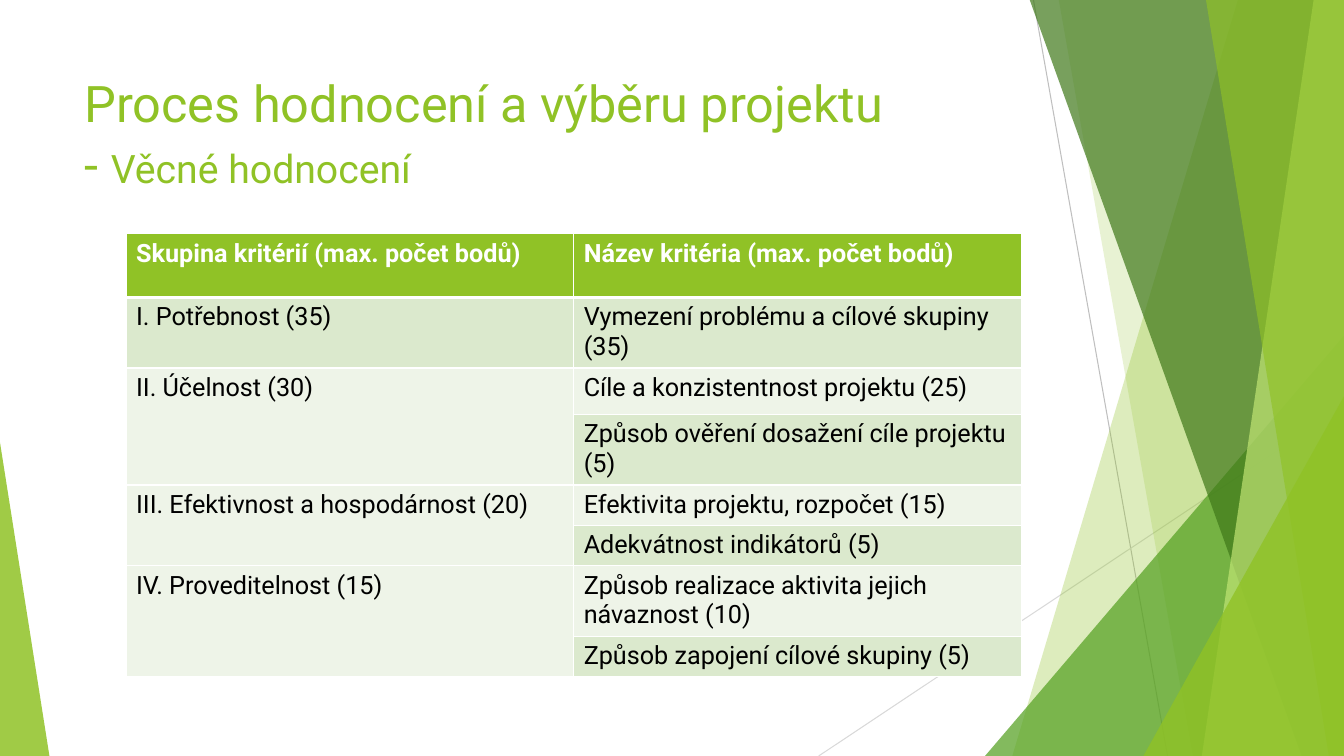
from pptx import Presentation
from pptx import util as u
from pptx.dml.color import RGBColor
from pptx.enum import shapes, text
from pptx.oxml import ns, xmlchemy
from lxml import etree

WIDTH, HEIGHT, TOP = 13.33, 7.5, -0.01
WHITE = RGBColor(0xFF, 0xFF, 0xFF)
BLACK = RGBColor(0x00, 0x00, 0x00)
LIME = RGBColor(0x90, 0xC2, 0x26)
PALE_LIME = RGBColor(0xC0, 0xE4, 0x74)
GREEN = RGBColor(0x54, 0xA0, 0x21)
DARK_GREEN = RGBColor(0x3F, 0x78, 0x19)
GREY = RGBColor(0xBF, 0xBF, 0xBF)
LIGHT_GREY = RGBColor(0xD9, 0xD9, 0xD9)
BAND_DARK = RGBColor(0xDB, 0xE9, 0xCD)
BAND_LIGHT = RGBColor(0xEE, 0xF4, 0xE8)


def write(paragraph, words, size=18, color=BLACK, bold=False, font="Roboto"):
    run = paragraph.add_run()
    run.text = words
    run.font.name = font
    run.font.size = u.Pt(size)
    run.font.bold = bold
    run.font.color.rgb = color


class SlideBuilder:
    def __init__(self, slide):
        self.slide = slide
        self.shapes = slide.shapes

    def line(self, start, end, color):
        connector = self.shapes.add_connector(
            shapes.MSO_CONNECTOR.STRAIGHT, *map(u.Inches, start + end))
        connector.line.color.rgb = color
        connector.line.width = u.Pt(0.75)
        etree.SubElement(connector.element.spPr, ns.qn("a:effectLst"))

    def paint(self, shape, color, opacity):
        shape.shadow.inherit = False
        shape.fill.solid()
        shape.fill.fore_color.rgb = color
        shape.line.fill.background()
        rgb = shape.element.spPr.find(".//" + ns.qn("a:srgbClr"))
        etree.SubElement(rgb, ns.qn("a:alpha"), val=str(opacity * 1000))

    def ribbon(self, top_x, bottom_x, color, opacity):
        """Band from a slanted left side to the right slide edge."""
        corners = [(top_x, TOP), (WIDTH, TOP), (WIDTH, HEIGHT), (bottom_x, HEIGHT)]
        points = [(u.Inches(x), u.Inches(y)) for x, y in corners]
        outline = self.shapes.build_freeform(*points[0])
        outline.add_line_segments(points[1:], close=True)
        self.paint(outline.convert_to_shape(), color, opacity)

    def triangle(self, left, top, width, apex, color, opacity):
        """Triangle standing on the bottom slide edge."""
        shape = self.shapes.add_shape(
            shapes.MSO_SHAPE.ISOSCELES_TRIANGLE,
            *map(u.Inches, (left, top, width, HEIGHT - top)))
        shape.adjustments[0] = apex
        self.paint(shape, color, opacity)

    def title(self, heading, subheading):
        box = self.shapes.add_textbox(*map(u.Inches, (0.74, 0.67, 9.4, 1.44)))
        frame = box.text_frame
        frame.word_wrap = True
        frame.vertical_anchor = text.MSO_ANCHOR.TOP
        paragraph = frame.paragraphs[0]
        write(paragraph, heading, size=36, color=LIME)
        paragraph.add_line_break()
        write(paragraph, "- ", size=36, color=LIME)
        write(paragraph, subheading, size=28, color=LIME)

    def borders(self, cell, bottom):
        props = cell._tc.get_or_add_tcPr()
        for side, points in (("L", 1), ("R", 1), ("T", 1), ("B", bottom)):
            edge = etree.SubElement(props, ns.qn(f"a:ln{side}"), w=str(u.Pt(points)))
            fill = etree.SubElement(edge, ns.qn("a:solidFill"))
            etree.SubElement(fill, ns.qn("a:srgbClr"), val=str(WHITE))

    def cell(self, cell, words, fill, bottom=1, **style):
        self.borders(cell, bottom)
        cell.fill.solid()
        cell.fill.fore_color.rgb = fill
        if words:
            write(cell.text_frame.paragraphs[0], words, **style)

    def table(self, header, groups, heights):
        table = self.shapes.add_table(
            len(heights), 2, u.Inches(1.25), u.Inches(2.32),
            u.Inches(8.88), u.Inches(sum(heights))).table
        for column in table.columns:
            column.width = u.Inches(4.44)
        for row, height in zip(table.rows, heights):
            row.height = u.Inches(height)
        for col, words in enumerate(header):
            self.cell(table.cell(0, col), words, LIME, bottom=3, color=WHITE, bold=True)
        row = 1
        for group, criteria in groups:
            first = row
            group_fill = BAND_DARK if first % 2 else BAND_LIGHT
            for criterion in criteria:
                band = BAND_DARK if row % 2 else BAND_LIGHT
                self.cell(table.cell(row, 0), group if row == first else "", group_fill)
                self.cell(table.cell(row, 1), criterion, band)
                row += 1
            if row - first > 1:
                table.cell(first, 0).merge(table.cell(row - 1, 0))


def main():
    deck = Presentation()
    deck.slide_width, deck.slide_height = u.Inches(WIDTH), u.Inches(HEIGHT)
    builder = SlideBuilder(deck.slides.add_slide(deck.slide_layouts[6]))

    # Background facets
    builder.line((10.25, 0), (11.58, HEIGHT), GREY)
    builder.line((WIDTH, 4.03), (8.12, HEIGHT), LIGHT_GREY)
    builder.ribbon(12.28, 10.04, LIME, 30)
    builder.ribbon(10.5, 11.83, LIME, 20)
    builder.triangle(9.77, 3.33, 3.56, 1, GREEN, 72)
    builder.ribbon(10.21, 12.91, DARK_GREEN, 70)
    builder.ribbon(13.03, 11.92, PALE_LIME, 70)
    builder.ribbon(11.96, 13.18, LIME, 65)
    builder.triangle(11.34, 3.93, 1.99, 1, LIME, 80)
    builder.triangle(0, 4.39, 0.49, 0, LIME, 85)

    # Title
    builder.title("Proces hodnocení a výběru projektu", "Věcné hodnocení")

    # Criteria table
    builder.table(
        ("Skupina kritérií (max. počet bodů)", "Název kritéria (max. počet bodů)"),
        [
            ("I. Potřebnost (35)", ["Vymezení problému a cílové skupiny (35)"]),
            ("II. Účelnost (30)", ["Cíle a konzistentnost projektu (25)",
                                   "Způsob ověření dosažení cíle projektu (5)"]),
            ("III. Efektivnost a hospodárnost (20)", ["Efektivita projektu, rozpočet (15)",
                                                      "Adekvátnost indikátorů (5)"]),
            ("IV. Proveditelnost (15)", ["Způsob realizace aktivita jejich návaznost (10)",
                                         "Způsob zapojení cílové skupiny (5)"]),
        ],
        heights=[0.63, 0.68, 0.46, 0.69, 0.39, 0.39, 0.69, 0.39])

    deck.save("out.pptx")


if __name__ == "__main__":
    main()
